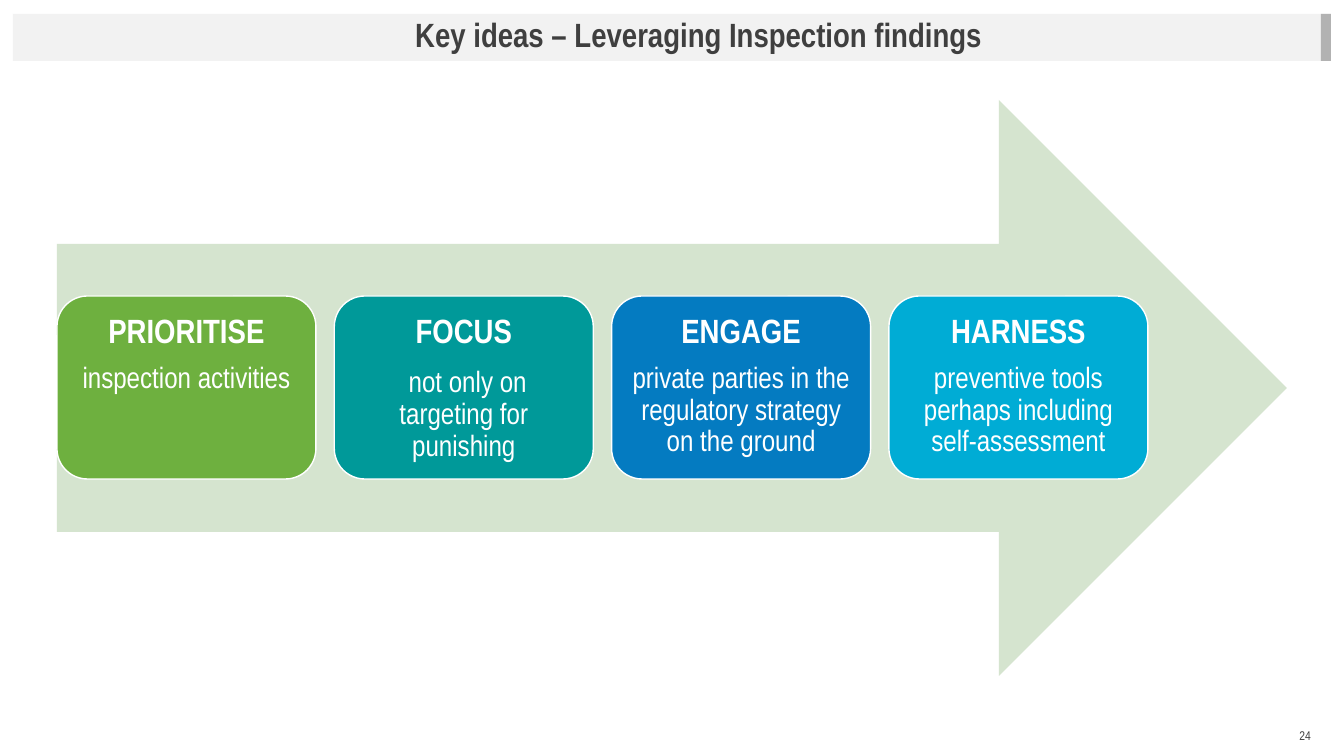
import pptx
import pptx.util
import pptx.dml.color
import pptx.enum.shapes
import pptx.enum.text

TITLE = "Key ideas – Leveraging Inspection findings"
PAGE_NUMBER = "24"
# heading, lead-in set in the heading's format, text, fill
CARDS = [
    ("PRIORITISE", "", "inspection activities", "green"),
    ("FOCUS", " ", "not only on targeting for punishing", "teal"),
    ("ENGAGE", "", "private parties in the regulatory strategy on the ground", "blue"),
    ("HARNESS", "", "preventive tools perhaps including self-assessment", "cyan"),
]
COLORS = {
    "band": "F2F2F2", "accent": "B2B2B2", "ink": "3F3F3F", "arrow": "D5E4CF",
    "white": "FFFFFF", "green": "6EB03F", "teal": "009999", "blue": "047BC1",
    "cyan": "00ACD5",
}
FONT = "Arial Narrow"
SCALE = 914400 / 100.8
PAGE_SIZE = (1344, 756)
CARD_TOP, CARD_WIDTH, CARD_HEIGHT = 296, 259, 183
FIRST_CARD, LAST_CARD = 57, 889

SHAPES = pptx.enum.shapes.MSO_SHAPE
ALIGN = pptx.enum.text.PP_ALIGN
ANCHOR = pptx.enum.text.MSO_ANCHOR


def px(length):
    return pptx.util.Emu(round(length * SCALE))


def color(name):
    return pptx.dml.color.RGBColor.from_string(COLORS[name])


def add_block(page, kind, place, fill, line=None):
    block = page.shapes.add_shape(kind, *map(px, place))
    block.shadow.inherit = False
    block.fill.solid()
    block.fill.fore_color.rgb = color(fill)
    if line:
        block.line.color.rgb = color(line)
        block.line.width = pptx.util.Pt(1)
    else:
        block.line.fill.background()
    return block


def set_frame(box, anchor, inset):
    frame = box.text_frame
    frame.word_wrap = True
    frame.auto_size = pptx.enum.text.MSO_AUTO_SIZE.NONE
    frame.vertical_anchor = anchor
    frame.margin_left = frame.margin_right = px(inset)
    frame.margin_top = frame.margin_bottom = px(inset)
    return frame


def write(para, text, size, ink="ink", bold=False, align=ALIGN.CENTER,
          spacing=0.9, after=0):
    para.alignment = align
    para.line_spacing = spacing
    para.space_before = pptx.util.Pt(0)
    para.space_after = pptx.util.Pt(after)
    span = para.add_run()
    span.text = text
    span.font.name = FONT
    span.font.size = pptx.util.Pt(size)
    span.font.bold = bold
    span.font.color.rgb = color(ink)


def add_card(page, left, heading, lead, text, fill):
    card = add_block(page, SHAPES.ROUNDED_RECTANGLE,
                     (left, CARD_TOP, CARD_WIDTH, CARD_HEIGHT), fill, "white")
    frame = set_frame(card, ANCHOR.TOP, 10)
    head_format = {"size": 24, "ink": "white", "bold": True, "after": 8.4}
    write(frame.paragraphs[0], heading, **head_format)
    body = frame.add_paragraph()
    if lead:
        write(body, lead, **head_format)
    write(body, text, 21, ink="white", after=7.4)


def main():
    deck = pptx.Presentation()
    deck.slide_width, deck.slide_height = map(px, PAGE_SIZE)
    page = deck.slides.add_slide(deck.slide_layouts[5])

    band = add_block(page, SHAPES.RECTANGLE, (13, 14, 1318, 47), "band")
    title = page.shapes.title
    band._element.addnext(title._element)
    title.left, title.top, title.width, title.height = map(px, (75, 14, 1247, 46))
    write(set_frame(title, ANCHOR.MIDDLE, 0).paragraphs[0], TITLE, 24, bold=True)
    add_block(page, SHAPES.RECTANGLE, (1321, 14, 10, 47), "accent")

    number = page.shapes.add_textbox(*map(px, (1019, 716, 302, 40)))
    write(set_frame(number, ANCHOR.MIDDLE, 10).paragraphs[0], PAGE_NUMBER, 9,
          align=ALIGN.RIGHT, spacing=1.0)

    add_block(page, SHAPES.RIGHT_ARROW, (57, 100, 1230, 576), "arrow")
    step = (LAST_CARD - FIRST_CARD) / (len(CARDS) - 1)
    for index, card in enumerate(CARDS):
        add_card(page, FIRST_CARD + index * step, *card)

    deck.save("out.pptx")


if __name__ == "__main__":
    main()
